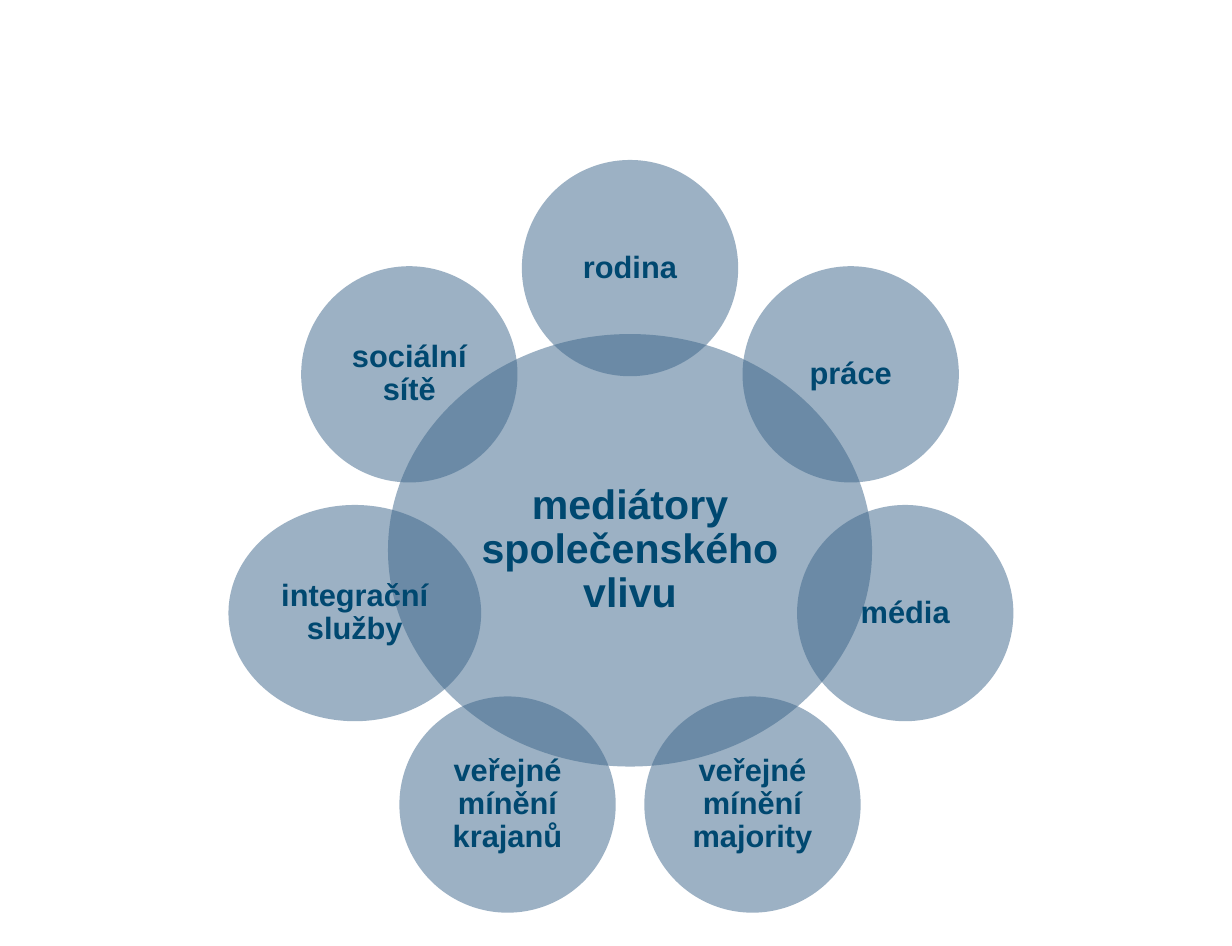
from math import cos, pi, sin

from lxml import etree
from pptx import Presentation
from pptx.dml.color import RGBColor
from pptx.enum.shapes import MSO_SHAPE
from pptx.enum.text import MSO_ANCHOR, PP_ALIGN
from pptx.oxml.ns import qn
from pptx.util import Cm, Pt

ELLIPSE = MSO_SHAPE.OVAL
MIDDLE = MSO_ANCHOR.MIDDLE
CENTER = PP_ALIGN.CENTER

COLORS = {"circle": "3B658A", "text": "004870"}

# Lengths in centimetres
CENTER_X, CENTER_Y = 12.99, 11.35
RING_RADIUS = 5.82
HUB_WIDTH, HUB_HEIGHT = 9.98, 8.92
CIRCLE_SIZE = 4.46
WIDE_CIRCLE = 5.21

HUB = "mediátory společenského vlivu"
# Clockwise from the top: label and width
MEDIATORS = [
    ("rodina", CIRCLE_SIZE),
    ("práce", CIRCLE_SIZE),
    ("média", CIRCLE_SIZE),
    ("veřejné mínění majority", CIRCLE_SIZE),
    ("veřejné mínění krajanů", CIRCLE_SIZE),
    ("integrační služby", WIDE_CIRCLE),
    ("sociální sítě", CIRCLE_SIZE),
]


class RadialVenn:
    """Style and current slide of the diagram."""

    font_name = "Arial"
    opacity = 50
    inset = Cm(0.08)

    def __init__(self, slide):
        self.slide = slide
        self.group = slide.shapes.add_group_shape()

    def circle(self, label, x, y, width, height, size):
        """Add a translucent ellipse centred on x, y with its label."""
        circle = self.group.shapes.add_shape(
            ELLIPSE, Cm(x - width / 2), Cm(y - height / 2), Cm(width), Cm(height))
        circle.shadow.inherit = False
        circle.line.fill.background()
        circle.fill.solid()
        circle.fill.fore_color.rgb = RGBColor.from_string(COLORS["circle"])
        color = circle.fill._xPr.find(qn("a:solidFill"))[0]
        etree.SubElement(color, qn("a:alpha"), val=str(self.opacity * 1000))
        self.label(circle.text_frame, label, size)

    def label(self, frame, text, size):
        frame.word_wrap = True
        frame.vertical_anchor = MIDDLE
        frame.margin_left = frame.margin_right = self.inset
        frame.margin_top = frame.margin_bottom = self.inset
        paragraph = frame.paragraphs[0]
        paragraph.text = text
        paragraph.alignment = CENTER
        paragraph.line_spacing = 0.9
        font = paragraph.font
        font.name = self.font_name
        font.size = Pt(size)
        font.bold = True
        font.color.rgb = RGBColor.from_string(COLORS["text"])


def main():
    presentation = Presentation()
    presentation.slide_width = Cm(25.4)
    presentation.slide_height = Cm(19.51)
    slide = presentation.slides.add_slide(presentation.slide_layouts[6])
    venn = RadialVenn(slide)

    # Hub
    venn.circle(HUB, CENTER_X, CENTER_Y, HUB_WIDTH, HUB_HEIGHT, 24)

    # Ring of mediators at equal angles
    for index, (mediator, width) in enumerate(MEDIATORS):
        angle = 2 * pi * index / len(MEDIATORS)
        x = CENTER_X + RING_RADIUS * sin(angle)
        y = CENTER_Y - RING_RADIUS * cos(angle)
        venn.circle(mediator, x, y, width, CIRCLE_SIZE, 18)

    presentation.save("out.pptx")


if __name__ == "__main__":
    main()
